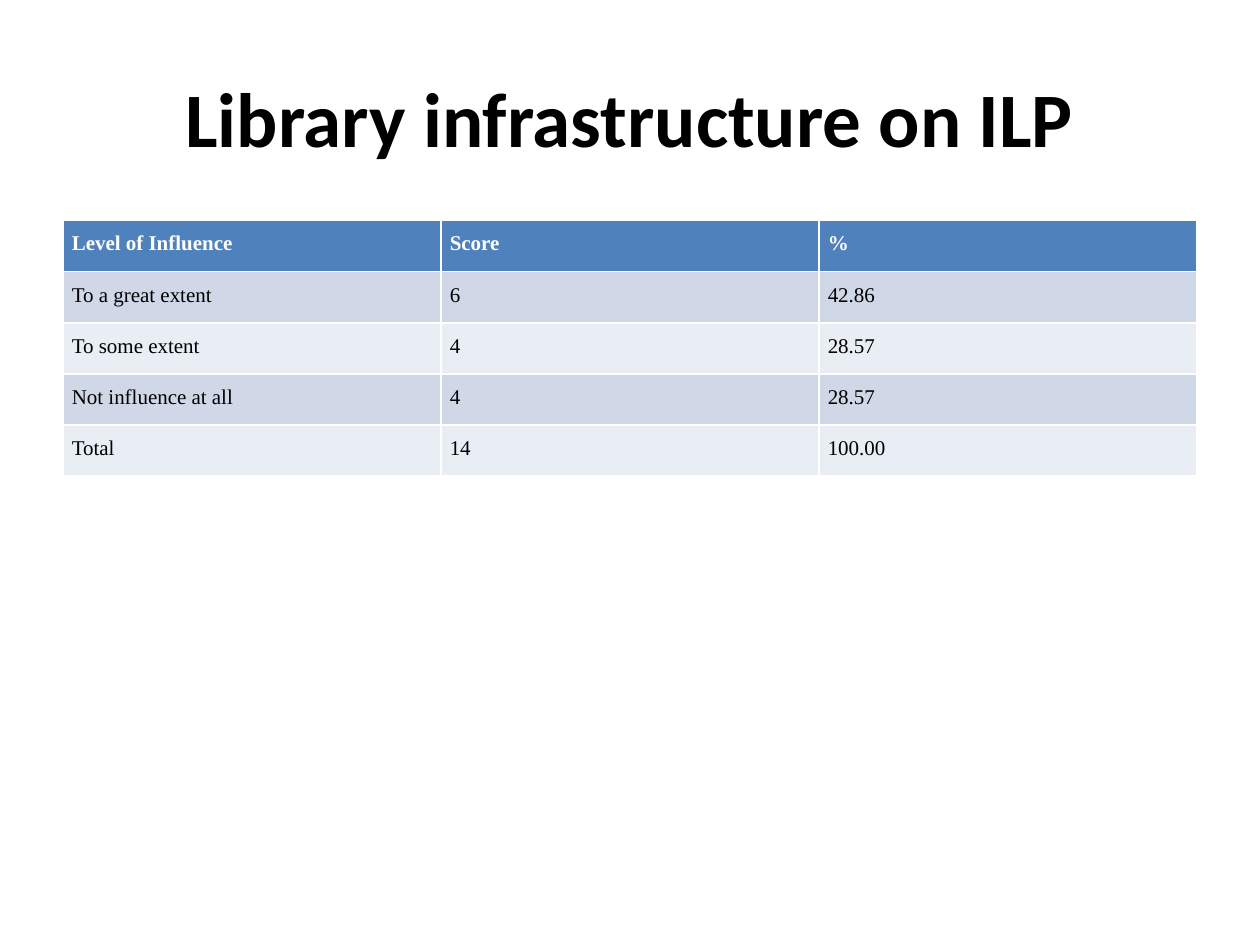
from pptx import Presentation
from pptx.dml.color import RGBColor
from pptx.enum.text import MSO_ANCHOR, PP_ALIGN
from pptx.util import Inches, Pt

CENTER, JUSTIFY = PP_ALIGN.CENTER, PP_ALIGN.JUSTIFY
MIDDLE = MSO_ANCHOR.MIDDLE

ROWS = [
    ("Level of Influence", "Score", "%"),
    ("To a great extent", "6", "42.86"),
    ("To some extent", "4", "28.57"),
    ("Not influence at all", "4", "28.57"),
    ("Total", "14", "100.00"),
]


def color(code):
    return RGBColor.from_string(code)


class Deck:
    head_font, body_font = "Calibri", "Times New Roman"
    black, white, blue = "000000", "FFFFFF", "4F81BD"
    bands = ("E9EDF4", "D0D8E8")

    def __init__(self, width, height):
        self.prs = Presentation()
        self.prs.slide_width = Inches(width)
        self.prs.slide_height = Inches(height)
        self.slide = self.prs.slides.add_slide(self.prs.slide_layouts[6])

    def label(self, frame, text, font, size, ink, bold, align):
        """Put one styled paragraph in a text frame and return it."""
        frame.word_wrap = True
        para = frame.paragraphs[0]
        para.text = text
        para.alignment = align
        para.font.name = font
        para.font.size = Pt(size)
        para.font.bold = bold
        para.font.color.rgb = color(ink)
        return para

    def title(self, text, *box):
        frame = self.slide.shapes.add_textbox(*map(Inches, box)).text_frame
        frame.vertical_anchor = MIDDLE
        self.label(frame, text, self.head_font, 44, self.black, True, CENTER)

    def table(self, rows, *box):
        """Add a table with a blue header; the table style draws white borders."""
        shape = self.slide.shapes.add_table(
            len(rows), len(rows[0]), *map(Inches, box))
        for r, row in enumerate(rows):
            for c, text in enumerate(row):
                self.cell(shape.table.cell(r, c), text, r)

    def cell(self, cell, text, row):
        head = row == 0
        cell.margin_left = cell.margin_right = Inches(0.07)
        cell.margin_top = cell.margin_bottom = 0
        cell.fill.solid()
        cell.fill.fore_color.rgb = color(self.blue if head else self.bands[row % 2])
        ink = self.white if head else self.black
        para = self.label(cell.text_frame, text, self.body_font, 12, ink, head, JUSTIFY)
        para.line_spacing = 1.5


def main():
    deck = Deck(10, 7.5)
    deck.title("Library infrastructure on ILP", 0.5, 0.3, 9, 1.25)
    deck.table(ROWS, 0.5, 1.75, 9, 2.03)
    deck.prs.save("out.pptx")


if __name__ == "__main__":
    main()
